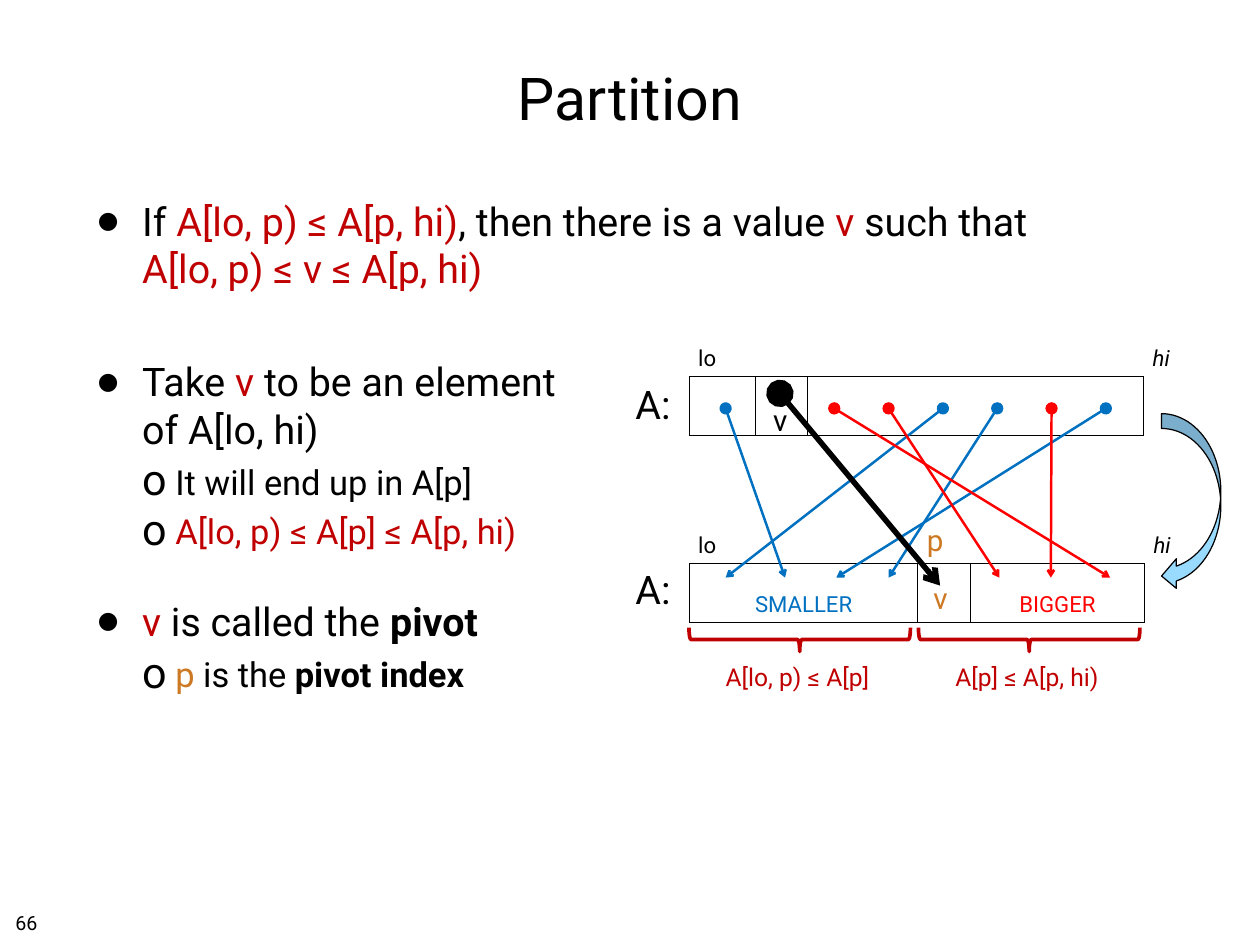
from lxml.etree import SubElement, Element
from pptx import Presentation
from pptx.dml.color import RGBColor
from pptx.enum.shapes import MSO_CONNECTOR as Connector, MSO_SHAPE as Shape
from pptx.enum.text import MSO_ANCHOR as Anchor, PP_ALIGN as Align
from pptx.oxml.ns import qn
from pptx.util import Pt

FONT = "Roboto"
BLACK, CRIMSON, RED, BLUE, ORANGE, SKY = "000000", "C00000", "FF0000", "0070C0", "CD7923", "99DAFF"


def rgb(color):
    """Turn a hex string into a colour."""
    return RGBColor.from_string(color)


def add_runs(paragraph, text, size, color=BLACK, bold=False, italic=False):
    """Add formatted text to a paragraph, breaking lines at newlines."""
    for index, line in enumerate(text.split("\n")):
        if index:
            paragraph.add_line_break()
        if line:
            run = paragraph.add_run()
            run.text = line
            font = run.font
            font.name, font.size, font.bold, font.italic = FONT, Pt(size), bold, italic
            font.color.rgb = rgb(color)


def add_box(slide, box, inset=4.5, wrap=True, anchor=Anchor.TOP):
    """Add an empty text box and return its text frame."""
    frame = slide.shapes.add_textbox(*map(Pt, box)).text_frame
    frame.word_wrap, frame.vertical_anchor = wrap, anchor
    frame.margin_left = frame.margin_right = Pt(inset)
    frame.margin_top = frame.margin_bottom = Pt(min(inset, 4))
    return frame


def add_label(slide, box, text, size, color=BLACK, align=Align.CENTER, **frame_format):
    """Add a one-paragraph text box."""
    paragraph = add_box(slide, box, **frame_format).paragraphs[0]
    paragraph.alignment = align
    add_runs(paragraph, text, size, color)


def set_bullet(paragraph, character, indent, hanging, percent):
    """Give a paragraph a hanging bullet."""
    properties = paragraph._p.get_or_add_pPr()
    properties.set("marL", str(Pt(indent)))
    properties.set("indent", str(-Pt(hanging)))
    SubElement(SubElement(properties, qn("a:buClr")), qn("a:srgbClr"), val=BLACK)
    SubElement(properties, qn("a:buSzPct"), val=str(percent * 1000))
    SubElement(properties, qn("a:buFont"), typeface=FONT)
    SubElement(properties, qn("a:buChar"), char=character)


def add_outline(slide, box):
    """Write the bulleted text: level, space before and runs for each item."""
    items = [
        (0, 8, [("If ", BLACK), ("A[lo, p) ≤ A[p, hi)", CRIMSON), (", then there is a value ", BLACK),
                ("v", CRIMSON), (" such that\n", BLACK), ("A[lo, p) ≤ v ≤ A[p, hi)", CRIMSON)]),
        (0, 53.5, [("Take ", BLACK), ("v", CRIMSON), (" to be an element\nof A[lo, hi)", BLACK)]),
        (1, 7, [("It will end up in A[p]", BLACK)]),
        (1, 7, [("A[lo, p) ≤ A[p] ≤ A[p, hi)", CRIMSON)]),
        (0, 36.5, [("v", CRIMSON), (" is called the ", BLACK), ("pivot", BLACK, True)]),
        (1, 7, [("p", ORANGE), (" is the ", BLACK), ("pivot index", BLACK, True)]),
    ]
    frame = add_box(slide, box)
    for index, (level, space, runs) in enumerate(items):
        paragraph = frame.add_paragraph() if index else frame.paragraphs[0]
        paragraph.level, paragraph.space_before = level, Pt(space)
        set_bullet(paragraph, *(("o", 63, 27, 125) if level else ("●", 36, 36, 60)))
        for text, color, *bold in runs:
            add_runs(paragraph, text, 28 if level else 32, color, bold=bool(bold))


def set_borders(cell, sides):
    """Draw the named sides of a cell and hide the others."""
    properties = cell._tc.get_or_add_tcPr()
    for index, side in enumerate("LRTB"):
        line = Element(qn(f"a:ln{side}"), w=str(Pt(1)))
        if side in sides:
            SubElement(SubElement(line, qn("a:solidFill")), qn("a:srgbClr"), val=BLACK)
        else:
            SubElement(line, qn("a:noFill"))
        properties.insert(index, line)


def add_array(slide, left, top, widths, heights, texts, merges):
    """Draw one array: an index row above a row of boxed segments."""
    add_label(slide, (left - 54, top + heights[0] - 1.5, 49, 46.8), "A:", 32, anchor=Anchor.MIDDLE)
    frame = slide.shapes.add_table(2, len(widths), Pt(left), Pt(top), Pt(sum(widths)), Pt(sum(heights)))
    table = frame.table
    table.first_row = table.horz_banding = False
    for column, width in zip(table.columns, widths):
        column.width = Pt(width)
    for row, height in zip(table.rows, heights):
        row.height = Pt(height)
    last = len(widths) - 1
    for row in range(2):
        for column in range(len(widths)):
            cell = table.cell(row, column)
            cell.fill.background()
            cell.vertical_anchor = Anchor.BOTTOM
            inside, outside = ("LRTB", "L") if row else ("B", "")
            set_borders(cell, inside if column < last else outside)
    for row, first, final in merges:
        table.cell(row, first).merge(table.cell(row, final))
    for (row, column), (text, size, color) in texts.items():
        paragraph = table.cell(row, column).text_frame.paragraphs[0]
        paragraph.alignment = Align.CENTER if row else Align.LEFT
        add_runs(paragraph, text, size, color, italic=text == "hi")


def add_move(slide, start, end, color, width):
    """Draw an arrow with a round start for one moved element."""
    connector = slide.shapes.add_connector(Connector.STRAIGHT, *map(Pt, start + end))
    connector.line.color.rgb, connector.line.width = rgb(color), Pt(width)
    properties = connector._element.spPr
    line = properties.find(qn("a:ln"))
    SubElement(line, qn("a:headEnd"), type="oval", w="lg", len="lg")
    SubElement(line, qn("a:tailEnd"), type="arrow")
    SubElement(properties, qn("a:effectLst"))


def add_moves(slide, left, top):
    """Draw the arrows that carry elements to their side of the pivot."""
    targets = [29.5, 77.8, 119.5, 162, 203.8, 252, 293.8, 342]
    moves = [(1, BLUE), (4, BLACK), (7, RED), (5, RED), (0, BLUE), (3, BLUE), (6, RED), (2, BLUE)]
    for index, (target, color) in reversed(list(enumerate(moves))):
        pivot = color == BLACK
        start = (left + 29.5 + 44.15 * index, top + (49.7 if pivot else 61.9))
        end = (left + targets[target], top + (205.9 if pivot else 199.4))
        add_move(slide, start, end, color, 4.5 if pivot else 2)


def add_shape(slide, kind, box, color, width, fill=None):
    """Add a preset shape without a shadow."""
    shape = slide.shapes.add_shape(kind, *map(Pt, box))
    shape.shadow.inherit = False
    shape.line.color.rgb, shape.line.width = rgb(color), Pt(width)
    if fill:
        shape.fill.solid()
        shape.fill.fore_color.rgb = rgb(fill)
    else:
        shape.fill.background()
    return shape


def add_brace(slide, center, middle, text):
    """Draw a brace under a segment with its condition below."""
    length, depth = 180, 19.4
    brace = add_shape(slide, Shape.RIGHT_BRACE,
                      (center - depth / 2, middle - length / 2, depth, length), CRIMSON, 3)
    brace.rotation = 90
    add_label(slide, (center - 69.5, middle + 14.4, 135.4, 31.7), text, 20, CRIMSON, inset=7.2, wrap=False)


def add_diagram(slide, left, top):
    """Draw the array before and after partitioning."""
    low, high = ("lo", 18, BLACK), ("hi", 18, BLACK)
    add_array(slide, left, top + 151.9, [185.8, 42.5, 141.8, 32.4], [34.6, 48.2],
              {(0, 0): low, (0, 1): ("p", 24, ORANGE), (0, 3): high,
               (1, 0): ("SMALLER", 18, BLUE), (1, 2): ("BIGGER", 18, RED)}, [(0, 1, 2)])
    add_array(slide, left, top, [54, 41.8, 89.3, 184.3, 32.4], [36, 48.2],
              {(0, 0): low, (0, 4): high}, [(0, 0, 2), (1, 2, 3)])
    add_shape(slide, Shape.CURVED_LEFT_ARROW, (left + 383.8, top + 66.2, 48.2, 144), BLACK, 1, SKY)
    add_moves(slide, left, top)
    for center, text in ((89.7, "A[lo, p) ≤ A[p]"), (276.2, "A[p] ≤ A[p, hi)")):
        add_brace(slide, left + center, top + 249.8, text)
    for x, y, color in ((60.6, 52.6, BLACK), (190.8, 197.3, ORANGE)):
        add_label(slide, (left + x, top + y, 26.6, 36), "v", 24, color, inset=7.2, wrap=False)


def main():
    """Build and save the slide."""
    presentation = Presentation()
    presentation.slide_width, presentation.slide_height = Pt(1024), Pt(768)
    slide = presentation.slides.add_slide(presentation.slide_layouts[6])
    add_label(slide, (75, 20, 874, 118), "Partition", 48, anchor=Anchor.MIDDLE)
    add_outline(slide, (75, 156.2, 874, 543))
    add_label(slide, (8, 736.6, 40, 28), "66", 16, align=Align.LEFT)
    add_diagram(slide, 560.2, 270)
    presentation.save("out.pptx")


if __name__ == "__main__":
    main()
